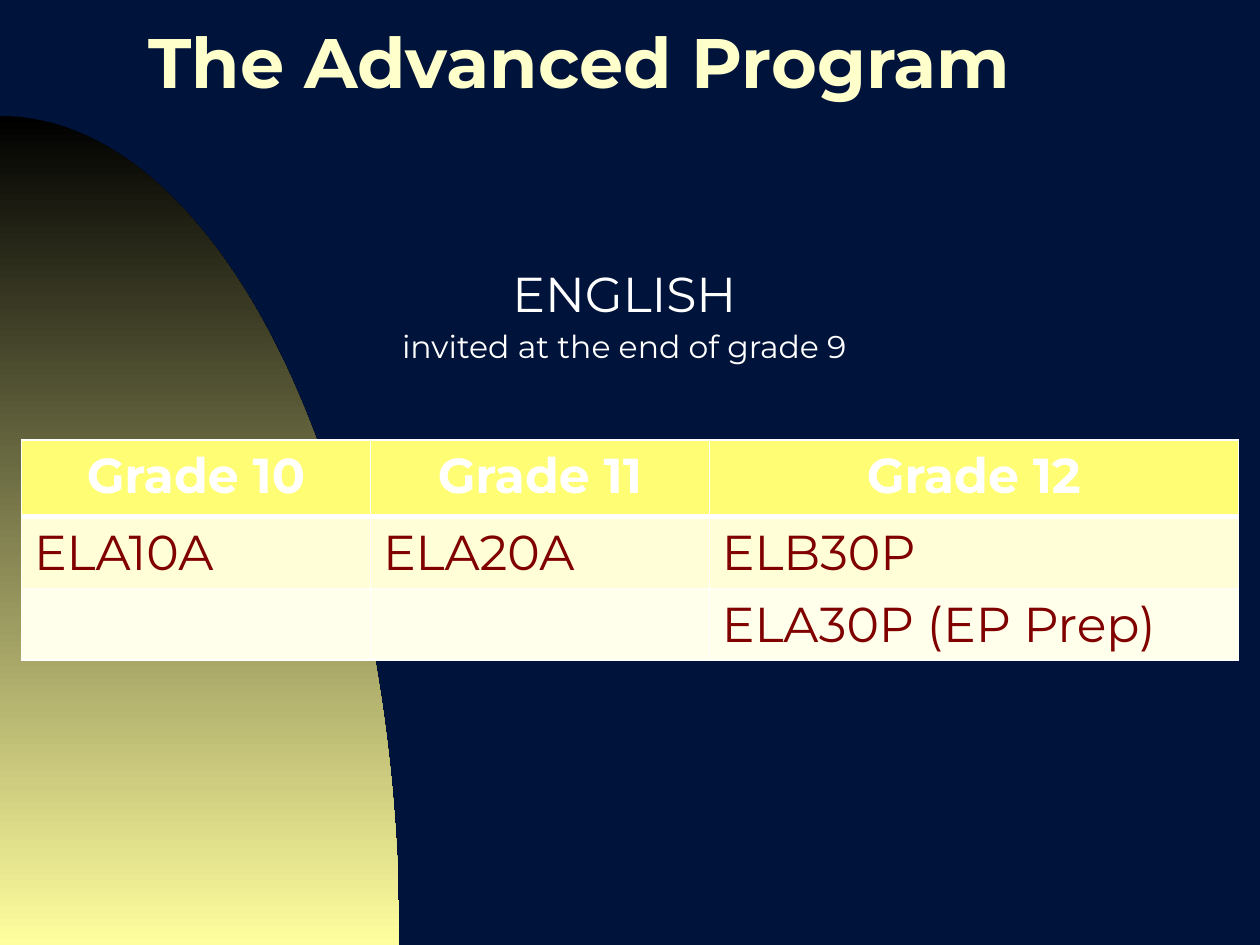
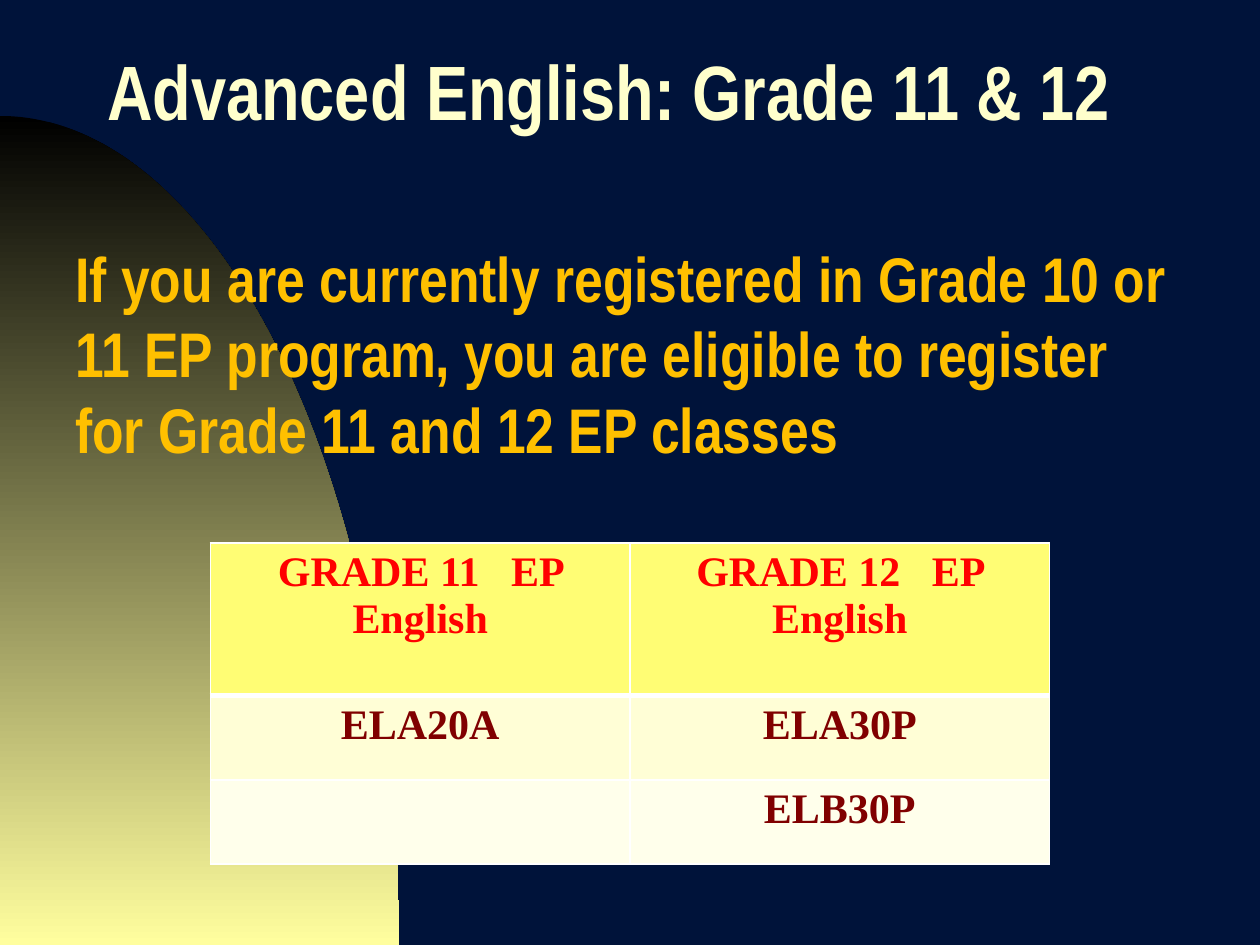
from math import cos, pi, sin

from lxml import etree
from pptx import Presentation
from pptx.dml.color import RGBColor
from pptx.enum.text import MSO_ANCHOR, MSO_AUTO_SIZE, PP_ALIGN
from pptx.oxml.ns import qn
from pptx.util import Inches, Pt

LEFT, MID = PP_ALIGN.LEFT, PP_ALIGN.CENTER
CENTER = MSO_ANCHOR.MIDDLE
FIXED = MSO_AUTO_SIZE.NONE

NAVY = RGBColor(0x00, 0x13, 0x3A)
BLACK = RGBColor(0x00, 0x00, 0x00)
WHITE = RGBColor(0xFF, 0xFF, 0xFF)
GLOW = RGBColor(0xFF, 0xFE, 0x9E)
CREAM = RGBColor(0xFF, 0xFF, 0xCC)
GOLD = RGBColor(0xFF, 0xC0, 0x00)
RED = RGBColor(0xFF, 0x00, 0x00)
MAROON = RGBColor(0x80, 0x00, 0x00)
ROWS = [RGBColor(0xFF, 0xFD, 0x74), RGBColor(0xFF, 0xFE, 0xD6),
        RGBColor(0xFF, 0xFF, 0xEB)]

SANS, NARROW, SERIF = "Montserrat", "Arial Narrow", "Times New Roman"


def write(frame, text, font, size, color, bold=False, align=LEFT, new=False,
          before=0, spacing=None):
    """Write one paragraph, either the first or a new one."""
    para = frame.add_paragraph() if new else frame.paragraphs[0]
    para.alignment = align
    para.space_before = Pt(before)
    if spacing:
        para.line_spacing = spacing
    run = para.add_run()
    run.text = text
    run.font.name, run.font.size, run.font.bold = font, Pt(size), bold
    run.font.color.rgb = color


def edge(cell, sides):
    """Draw white cell borders; sides maps L, R, T, B to points."""
    props = cell._tc.get_or_add_tcPr()
    for spot, (side, width) in enumerate(sides.items()):
        line = etree.Element(qn("a:ln" + side), w=str(Pt(width)))
        fill = etree.SubElement(line, qn("a:solidFill"))
        etree.SubElement(fill, qn("a:srgbClr"), val=str(WHITE))
        props.insert(spot, line)


# Content of the two slides
PAGES = [
    dict(title="The Advanced Program", place=(1.08, 0.17, 8.67, 0.78),
         face=SANS, size=40,
         body=(0.33, 2.04, 9.25, 1.1),
         lines=[("ENGLISH", dict(font=SANS, size=28, color=WHITE, align=MID)),
                ("invited at the end of grade 9",
                 dict(font=SANS, size=18, color=WHITE, align=MID,
                      new=True, before=3))],
         corner=(0.17, 3.49), cols=[2.77, 2.69, 4.2], rows=[0.61, 0.57, 0.57],
         cells=[["Grade 10", "Grade 11", "Grade 12"],
                ["ELA10A", "ELA20A", "ELB30P"],
                ["", "", "ELA30P (EP Prep)"]],
         head=dict(font=SANS, size=28, color=WHITE, bold=True, align=MID),
         cell=dict(font=SANS, size=28, color=MAROON)),
    dict(title="Advanced English: Grade 11 & 12", place=(0.75, 0.18, 8.5, 1.25),
         face=NARROW, size=44,
         body=(0.5, 1.85, 9, 2),
         lines=[("If you are currently registered in Grade 10 or 11 EP program, "
                 "you are eligible to register for Grade 11 and 12 EP classes",
                 dict(font=NARROW, size=36, color=GOLD, bold=True))],
         corner=(1.67, 4.31), cols=[3.33, 3.33], rows=[1.21, 0.67, 0.67],
         cells=[["GRADE 11   EP English", "GRADE 12   EP English"],
                ["ELA20A", "ELA30P"],
                ["", "ELB30P"]],
         head=dict(font=SERIF, size=24, color=RED, bold=True, align=MID),
         cell=dict(font=SERIF, size=24, color=MAROON, bold=True, align=MID)),
]

# Deck and shared background
prs = Presentation()
prs.slide_width, prs.slide_height = Inches(10), Inches(7.5)
back = prs.slide_master.background.fill
back.solid()
back.fore_color.rgb = NAVY

# Quarter ellipse, centred on the lower left corner
STEPS = 90
curve = [(Inches(3.17 * sin(n * pi / 2 / STEPS)),
          Inches(7.5 - 6.58 * cos(n * pi / 2 / STEPS)))
         for n in range(STEPS + 1)]

for page in PAGES:
    slide = prs.slides.add_slide(prs.slide_layouts[5])
    shapes = slide.shapes

    # Glowing arc behind everything
    pen = shapes.build_freeform(0, Inches(7.5))
    pen.add_line_segments(curve, close=True)
    arc = pen.convert_to_shape()
    arc.shadow.inherit = False
    arc.line.fill.background()
    arc.fill.gradient()
    arc.fill.gradient_angle = 270
    for stop, color, spot in zip(arc.fill.gradient_stops, (BLACK, GLOW), (0, 1)):
        stop.color.rgb = color
        stop.position = spot
    shapes._spTree.insert(2, arc._element)

    # Title
    title = shapes.title
    title.left, title.top, title.width, title.height = map(Inches, page["place"])
    frame = title.text_frame
    frame.auto_size, frame.vertical_anchor = FIXED, CENTER
    write(frame, page["title"], page["face"], page["size"], CREAM,
          bold=True, spacing=0.7)

    # Body text
    frame = shapes.add_textbox(*map(Inches, page["body"])).text_frame
    frame.word_wrap = True
    for text, style in page["lines"]:
        write(frame, text, **style)

    # Course table
    cols, rows = page["cols"], page["rows"]
    size = sum(cols), sum(rows)
    table = shapes.add_table(len(rows), len(cols),
                             *map(Inches, page["corner"] + size)).table
    for col, width in zip(table.columns, cols):
        col.width = Inches(width)
    for r, texts in enumerate(page["cells"]):
        table.rows[r].height = Inches(rows[r])
        for c, text in enumerate(texts):
            cell = table.cell(r, c)
            cell.fill.solid()
            cell.fill.fore_color.rgb = ROWS[r]
            edge(cell, dict(L=1, R=1, T=3 if r == 1 else 1, B=1 if r else 3))
            if text:
                write(cell.text_frame, text, **page["cell" if r else "head"])

prs.save("out.pptx")
